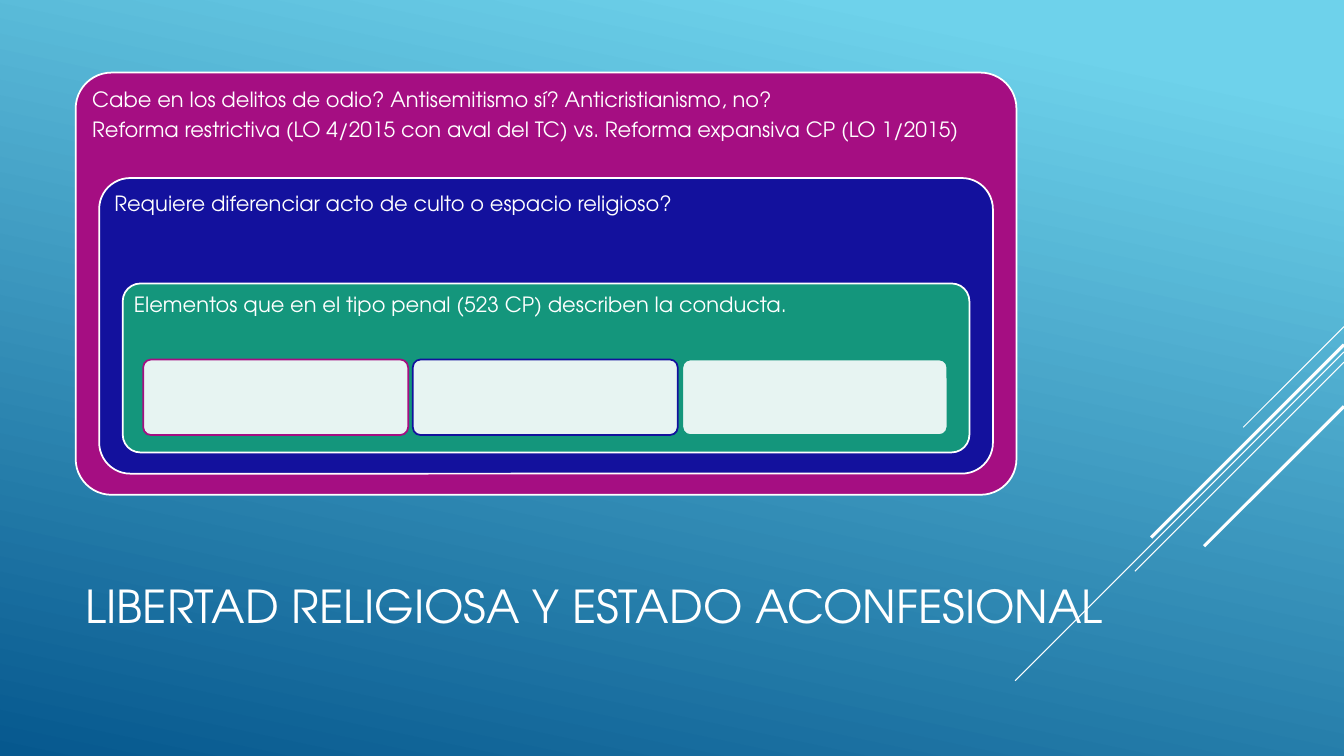
from lxml import etree
from pptx import Presentation
from pptx.dml.color import RGBColor
from pptx.enum.shapes import MSO_CONNECTOR, MSO_SHAPE
from pptx.enum.text import MSO_ANCHOR
from pptx.oxml.ns import qn
from pptx.util import Inches, Pt
from pptx.enum.text import PP_ALIGN

LEFT = PP_ALIGN.LEFT
TOP, MIDDLE = MSO_ANCHOR.TOP, MSO_ANCHOR.MIDDLE
ROUNDED, STRAIGHT = MSO_SHAPE.ROUNDED_RECTANGLE, MSO_CONNECTOR.STRAIGHT

WHITE = RGBColor(0xFF, 0xFF, 0xFF)
MAGENTA = RGBColor(0xA5, 0x0E, 0x82)
NAVY = RGBColor(0x13, 0x11, 0x9D)
GREEN = RGBColor(0x14, 0x96, 0x7C)
SKY = RGBColor(0x6E, 0xD2, 0xEB)
OCEAN = RGBColor(0x06, 0x58, 0x8E)

FONT = "TeX Gyre Adventor"
WIDTH, HEIGHT = Inches(13.33), Inches(7.5)


def write(frame, text, size=15, anchor=TOP, after=0.35,
          insets=(0.06, 0.06, 0.06, 0.06)):
    """Fill a text frame, one paragraph per line; insets run left, top, right, bottom."""
    frame.word_wrap = True
    frame.vertical_anchor = anchor
    (frame.margin_left, frame.margin_top,
     frame.margin_right, frame.margin_bottom) = map(Inches, insets)
    for index, line in enumerate(text.split("\n")):
        para = frame.add_paragraph() if index else frame.paragraphs[0]
        para.alignment = LEFT
        para.line_spacing = 0.9
        para.space_after = Pt(size * after)
        span = para.add_run()
        span.text = line
        span.font.name = FONT
        span.font.size = Pt(size)
        span.font.color.rgb = WHITE


class SlideBuilder:
    """Places elements on a page; lengths are percent of its width and height."""

    def __init__(self, page):
        self.page = page

    def place(self, left, top, width, height):
        return (round(WIDTH * left / 100), round(HEIGHT * top / 100),
                round(WIDTH * width / 100), round(HEIGHT * height / 100))

    def background(self, start, end, angle):
        fill = self.page.background.fill
        fill.gradient()
        fill.gradient_angle = angle
        for stop, color, position in zip(fill.gradient_stops, (start, end), (0.1, 1)):
            stop.color.rgb = color
            stop.position = position

    def diagonal(self, top, drop, weight):
        """Draw a 45 degree line down and left from the right edge."""
        _, start, _, fall = self.place(0, top, 0, drop)
        line = self.page.shapes.add_connector(
            STRAIGHT, WIDTH, start, WIDTH - fall, start + fall)
        line.line.color.rgb = WHITE
        line.line.width = Pt(weight)
        etree.SubElement(line._element.spPr, qn("a:effectLst"))

    def title(self, area, text):
        box = self.page.shapes.add_textbox(*self.place(*area))
        write(box.text_frame, text, size=32.4, anchor=MIDDLE, after=0,
              insets=(0.1, 0.67, 0.1, 0.05))

    def rounded_box(self, area, fill, outline, radius=0.105):
        box = self.page.shapes.add_shape(ROUNDED, *self.place(*area))
        box.shadow.inherit = False
        box.adjustments[0] = radius
        box.fill.solid()
        box.fill.fore_color.rgb = fill
        box.line.color.rgb = outline
        box.line.width = Pt(1.25)
        return box

    def panel(self, area, text, fill, radius):
        box = self.rounded_box(area, fill, WHITE, radius)
        write(box.text_frame, text)

    def card(self, area, outline, opacity=90):
        box = self.rounded_box(area, WHITE, outline)
        color = box._element.spPr.find(qn("a:solidFill"))[0]
        etree.SubElement(color, qn("a:alpha")).set("val", str(opacity * 1000))


def main():
    deck = Presentation()
    deck.slide_width, deck.slide_height = WIDTH, HEIGHT
    builder = SlideBuilder(deck.slides.add_slide(deck.slide_layouts[6]))

    # Background and diagonal lines
    builder.background(SKY, OCEAN, 258)
    for top, drop, weight in ((43.2, 13.33, 0.75), (46.55, 43.5, 0.75),
                              (47.9, 27.65, 0.75), (45.6, 25.5, 2.25),
                              (53.75, 18.5, 2.25)):
        builder.diagonal(top, drop, weight)

    # Title
    builder.title((5.63, 65.45, 78.5, 22), "LIBERTAD RELIGIOSA Y ESTADO ACONFESIONAL")

    # Nested panels, from the outside in
    panels = (
        ("Cabe en los delitos de odio? Antisemitismo sí? Anticristianismo, no?\n"
         "Reforma restrictiva (LO 4/2015 con aval del TC) vs. "
         "Reforma expansiva CP (LO 1/2015)", MAGENTA, 0.085),
        ("Requiere diferenciar acto de culto o espacio religioso?", NAVY, 0.105),
        ("Elementos que en el tipo penal (523 CP) describen la conducta.", GREEN, 0.105),
    )
    for level, (text, color, radius) in enumerate(panels):
        top, bottom = 9.6 + 13.95 * level, 65.45 - 2.8 * level
        area = (5.63 + 1.75 * level, top, 70 - 3.5 * level, bottom - top)
        builder.panel(area, text, color, radius)

    # Row of cards in the innermost panel
    for column, outline in enumerate((MAGENTA, NAVY, GREEN)):
        builder.card((10.65 + 20.06 * column, 47.55, 19.72, 10), outline)

    deck.save("out.pptx")


if __name__ == "__main__":
    main()
